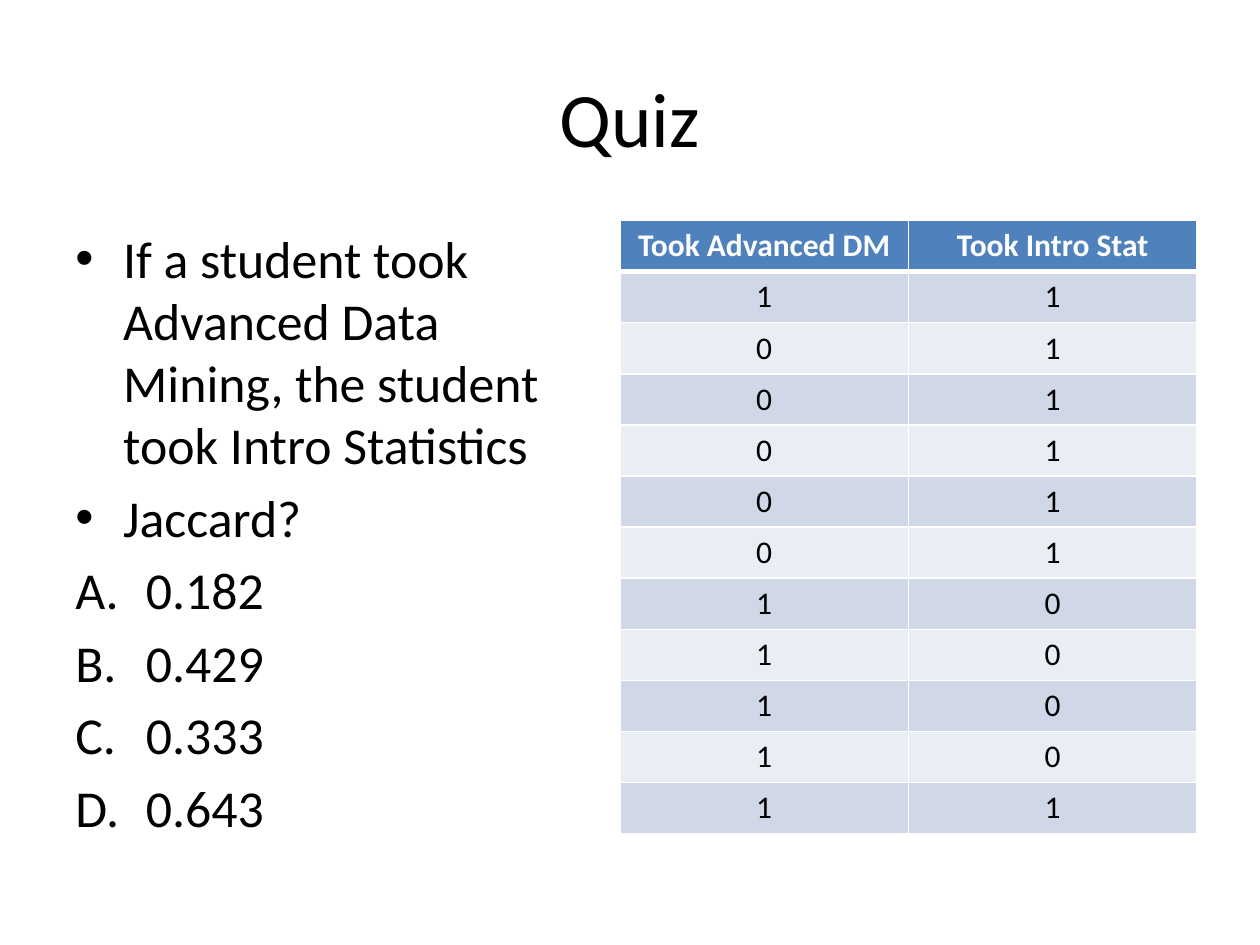
from dataclasses import dataclass

from lxml import etree
from pptx import Presentation
from pptx.dml.color import RGBColor
from pptx.enum.text import MSO_ANCHOR, PP_ALIGN
from pptx.oxml.ns import qn
from pptx.util import Inches, Pt

LEFT, CENTER = PP_ALIGN.LEFT, PP_ALIGN.CENTER
TOP, MIDDLE = MSO_ANCHOR.TOP, MSO_ANCHOR.MIDDLE


@dataclass(frozen=True)
class Theme:
    font: str = "Calibri"
    ink: str = "000000"
    paper: str = "FFFFFF"
    header: str = "4F81BD"
    bands: tuple = ("D0D8E8", "E9EDF4")
    title_size: float = 44
    body_size: float = 29.6
    table_size: float = 18
    body_gap: float = 5.9
    rule: float = 1
    header_rule: float = 3


THEME = Theme()

QUESTIONS = [
    "If a student took Advanced Data Mining, the student took Intro Statistics",
    "Jaccard?",
]
ANSWERS = ["0.182", "0.429", "0.333", "0.643"]
COURSES = ["Took Advanced DM", "Took Intro Stat"]
STUDENTS = [(1, 1)] + [(0, 1)] * 5 + [(1, 0)] * 4 + [(1, 1)]


def write(paragraph, text, size, color=THEME.ink, bold=False, align=LEFT):
    paragraph.alignment = align
    run = paragraph.add_run()
    run.text = text
    run.font.name = THEME.font
    run.font.size = Pt(size)
    run.font.bold = bold
    run.font.color.rgb = RGBColor.from_string(color)


def set_marker(paragraph, indent, tag, **attributes):
    """Give a paragraph a hanging indent and a bullet or automatic number."""
    properties = paragraph._p.get_or_add_pPr()
    properties.set("marL", str(Inches(indent)))
    properties.set("indent", str(-Inches(indent)))
    if tag == "a:buChar":
        etree.SubElement(properties, qn("a:buFont"), typeface="Arial")
    etree.SubElement(properties, qn(tag), **attributes)


def set_border(cell, side, width, color):
    line = etree.SubElement(cell._tc.get_or_add_tcPr(), qn(f"a:ln{side}"), w=str(Pt(width)))
    fill = etree.SubElement(line, qn("a:solidFill"))
    etree.SubElement(fill, qn("a:srgbClr"), val=color)


class SlideBuilder:
    def __init__(self, slide, theme):
        self.slide = slide
        self.theme = theme

    def text_frame(self, left, top, width, height, anchor=TOP):
        box = self.slide.shapes.add_textbox(
            Inches(left), Inches(top), Inches(width), Inches(height))
        frame = box.text_frame
        frame.word_wrap = True
        frame.vertical_anchor = anchor
        return frame

    def title(self, text, *area):
        frame = self.text_frame(*area, anchor=MIDDLE)
        write(frame.paragraphs[0], text, self.theme.title_size, align=CENTER)

    def quiz(self, questions, answers, *area):
        frame = self.text_frame(*area)
        for i, text in enumerate(questions + answers):
            paragraph = frame.add_paragraph() if i else frame.paragraphs[0]
            paragraph.space_before = Pt(self.theme.body_gap)
            write(paragraph, text, self.theme.body_size)
            if i < len(questions):
                set_marker(paragraph, 0.38, "a:buChar", char="•")
            else:
                set_marker(paragraph, 0.56, "a:buAutoNum", type="alphaUcPeriod")

    def table(self, header, records, left, top, width, height):
        theme = self.theme
        rows = [header] + records
        table = self.slide.shapes.add_table(
            len(rows), len(header), Inches(left), Inches(top),
            Inches(width), Inches(height)).table
        for r, record in enumerate(rows):
            is_header = r == 0
            fill = theme.header if is_header else theme.bands[(r - 1) % 2]
            color = theme.paper if is_header else theme.ink
            # The heavy rule is shared by the header and the first record
            rules = {
                "L": theme.rule,
                "R": theme.rule,
                "T": theme.header_rule if r == 1 else theme.rule,
                "B": theme.header_rule if is_header else theme.rule,
            }
            for c, value in enumerate(record):
                cell = table.cell(r, c)
                write(cell.text_frame.paragraphs[0], str(value), theme.table_size,
                      color=color, bold=is_header, align=CENTER)
                for side, rule in rules.items():
                    set_border(cell, side, rule, theme.paper)
                cell.fill.solid()
                cell.fill.fore_color.rgb = RGBColor.from_string(fill)


def main():
    deck = Presentation()
    deck.slide_width, deck.slide_height = Inches(10), Inches(7.5)
    builder = SlideBuilder(deck.slides.add_slide(deck.slide_layouts[6]), THEME)

    # Heading
    builder.title("Quiz", 0.5, 0.3, 9, 1.25)
    # Question and answer choices
    builder.quiz(QUESTIONS, ANSWERS, 0.5, 1.75, 4.17, 4.95)
    # Course records
    builder.table(COURSES, STUDENTS, 4.92, 1.75, 4.58, 4.87)

    deck.save("out.pptx")


if __name__ == "__main__":
    main()
